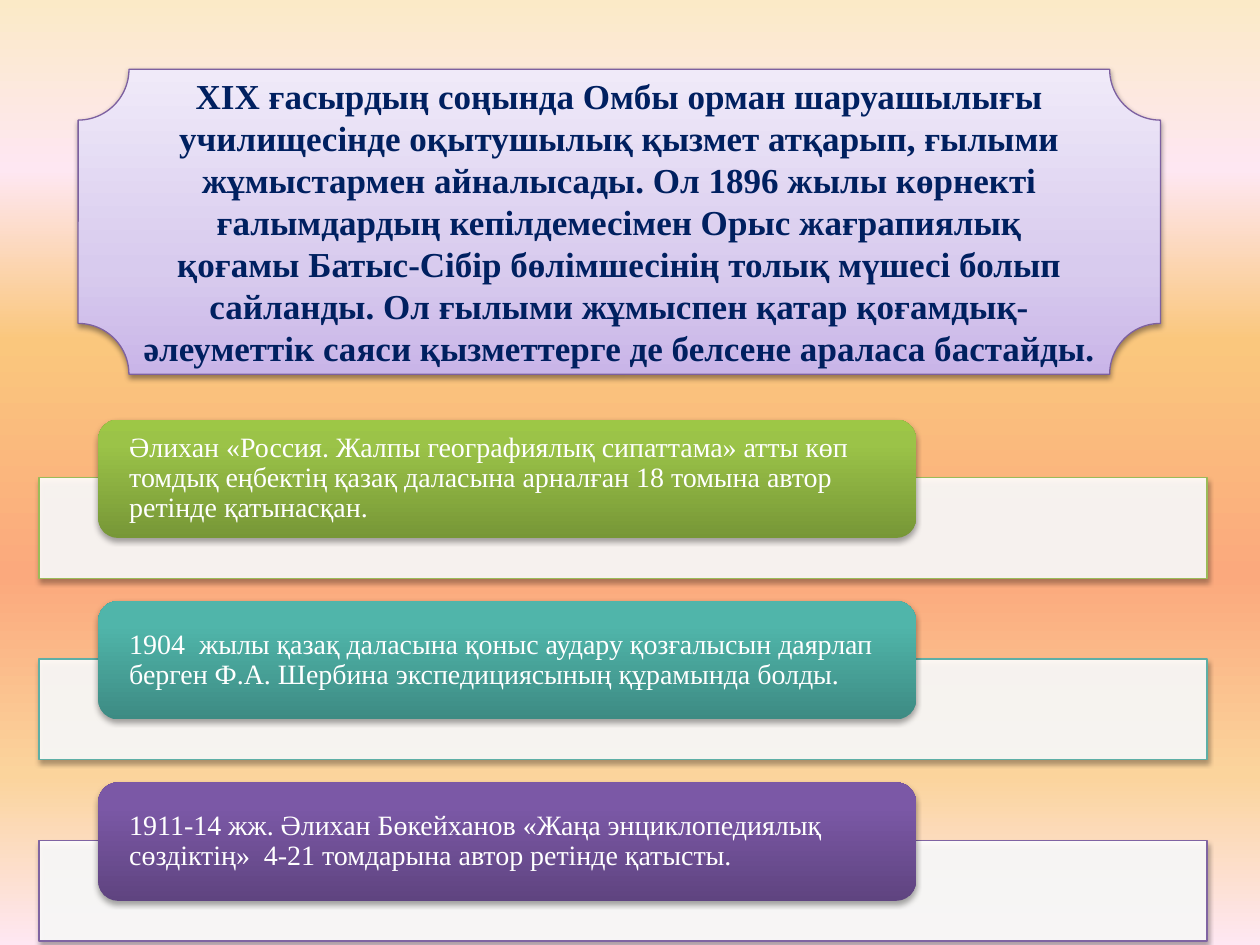
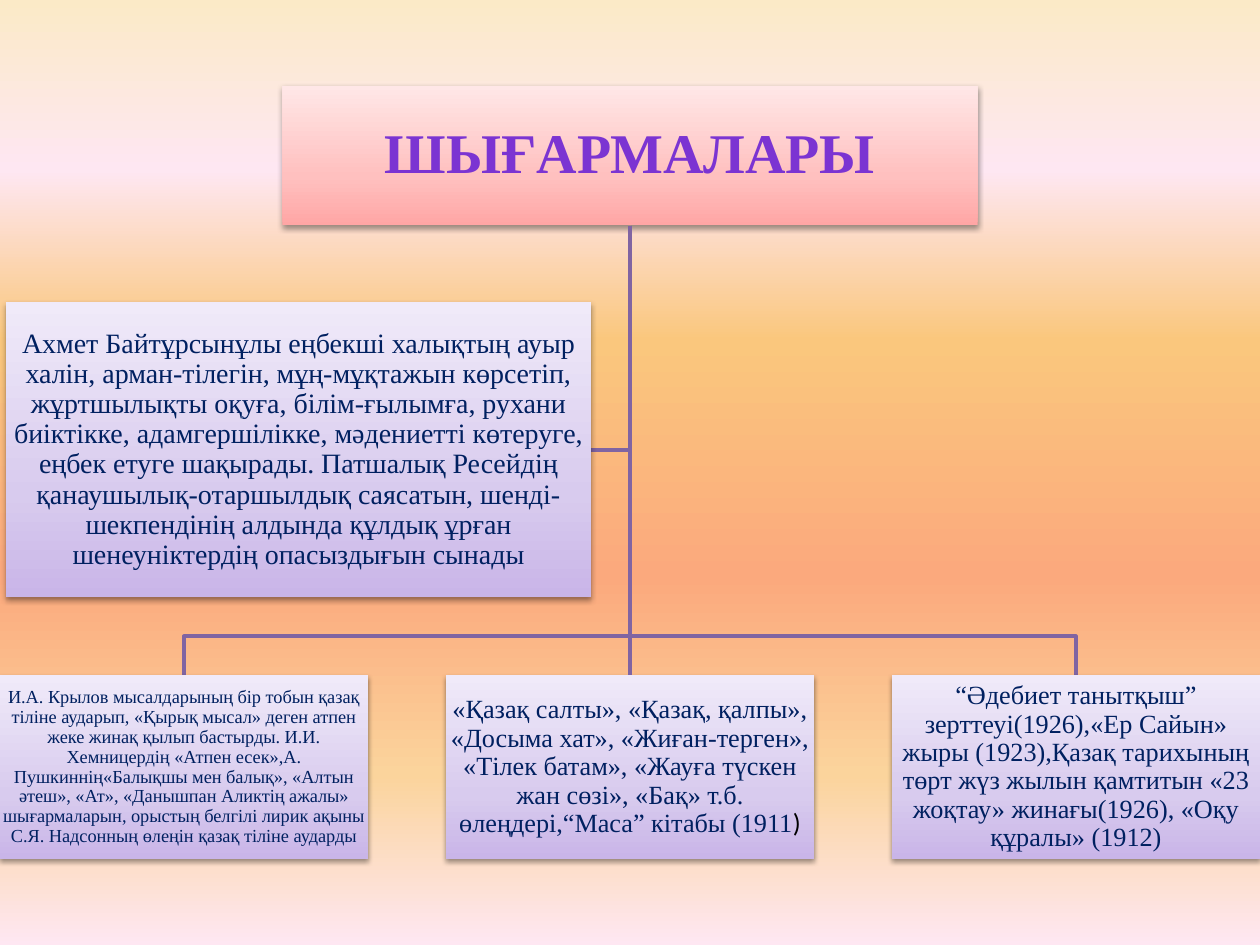
from dataclasses import dataclass

from lxml import etree
from pptx import Presentation
from pptx.dml.color import RGBColor
from pptx.enum.shapes import MSO_CONNECTOR, MSO_SHAPE
from pptx.enum.text import MSO_ANCHOR, MSO_AUTO_SIZE, PP_ALIGN
from pptx.oxml.ns import qn
from pptx.util import Inches, Pt

RECT = MSO_SHAPE.RECTANGLE
ROUNDED = MSO_SHAPE.ROUNDED_RECTANGLE
PLAQUE = MSO_SHAPE.PLAQUE
STRAIGHT = MSO_CONNECTOR.STRAIGHT
LEFT, CENTER = PP_ALIGN.LEFT, PP_ALIGN.CENTER
MIDDLE = MSO_ANCHOR.MIDDLE
NO_AUTOFIT = MSO_AUTO_SIZE.NONE
TOP_SIDE, BOTTOM_SIDE = 0, 2
TITLE_ONLY = 5
NBSP = chr(160)

FONT = "Times New Roman"
NAVY, WHITE, BLACK = "002060", "FFFFFF", "000000"
VIOLET, TITLE_VIOLET, PLAQUE_EDGE = "8064A2", "7B34D2", "7D60A0"
SUNSET = [(0, "FBEAC7"), (18, "FEE7F2"), (36, "FAC77D"),
          (61, "FBA97D"), (82, "FBD49C"), (100, "FEE7F2")]
LILAC = [(0, "C9B5E8"), (35, "D8CBEE"), (100, "F0EAF9")]
ROSE = [(0, "FFA6A5"), (35, "FFC0BF"), (100, "FFE7E7")]
DOWNWARD, UPWARD = 90, 270


@dataclass
class Box:
    left: float
    top: float
    width: float
    height: float

    def lengths(self) -> list:
        return [Inches(v) for v in (self.left, self.top, self.width, self.height)]

    @property
    def center_x(self) -> float:
        return self.left + self.width / 2


@dataclass
class Achievement:
    text: str
    edge: str
    shades: tuple


@dataclass
class Work:
    box: Box
    size: float
    text: str
    ending: str = ""


PLAQUE_BOX = Box(0.62, 0.55, 8.59, 2.42)
PLAQUE_TEXT = (
    "XIX ғасырдың соңында Омбы орман шаруашылығы училищесінде оқытушылық қызмет "
    f"атқарып, ғылыми жұмыстармен айналысады. Ол{NBSP}1896{NBSP}жылы көрнекті "
    f"ғалымдардың кепілдемесімен{NBSP}Орыс жағрапиялық қоғамы{NBSP}Батыс-Сібір "
    "бөлімшесінің толық мүшесі болып сайланды. Ол ғылыми жұмыспен қатар "
    "қоғамдық-әлеуметтік саяси қызметтерге де белсене араласа бастайды.")
ACHIEVEMENTS = [
    Achievement("Әлихан «Россия. Жалпы географиялық сипаттама» атты көп томдық "
                "еңбектің қазақ даласына арналған 18 томына автор ретінде қатынасқан.",
                "9BBB59", ("779737", "9BC348", "9DC746")),
    Achievement(f"1904 {NBSP}жылы қазақ даласына қоныс аудару қозғалысын даярлап берген "
                "Ф.А. Шербина экспедициясының құрамында болды.",
                "5EAFA6", ("3D8B83", "50B5AA", "4EB8AC")),
    Achievement(f"1911-14{NBSP}жж. Әлихан Бөкейханов «Жаңа энциклопедиялық сөздіктің»  "
                "4-21 томдарына автор ретінде қатысты.",
                VIOLET, ("5F4480", "7B58A6", "7C57A8")),
]
ROW_PITCH = 1.44

WORKS_TITLE_BOX = Box(2.24, 0.68, 5.52, 1.11)
WORK_TOP, WORK_PITCH, BRANCH_Y = 5.36, 3.54, 5.05
MESSAGE = Work(
    Box(0.05, 2.4, 4.64, 2.34), 16,
    "Ахмет Байтұрсынұлы еңбекші халықтың ауыр халін, арман-тілегін, мұң-мұқтажын "
    "көрсетіп, жұртшылықты оқуға, білім-ғылымға, рухани биіктікке, адамгершілікке, "
    "мәдениетті көтеруге, еңбек етуге шақырады. Патшалық Ресейдің "
    "қанаушылық-отаршылдық саясатын, шенді-шекпендінің алдында құлдық ұрған "
    "шенеуніктердің опасыздығын сынады")


def work_box(column: int) -> Box:
    return Box(column * WORK_PITCH, WORK_TOP, 2.92, 1.46)


WORKS = [
    Work(work_box(0), 10.5,
         "И.А. Крылов мысалдарының бір тобын қазақ тіліне аударып, «Қырық мысал» "
         "деген атпен жеке жинақ қылып бастырды. И.И. Хемницердің «Атпен есек»,А. "
         "Пушкиннің«Балықшы мен балық», «Алтын әтеш», «Ат», «Данышпан Аликтің "
         "ажалы» шығармаларын, орыстың белгілі лирик ақыны С.Я. Надсонның өлеңін "
         "қазақ тіліне аударды"),
    Work(work_box(1), 15,
         "«Қазақ салты», «Қазақ, қалпы», «Досыма хат», «Жиған-терген», «Тілек "
         "батам», «Жауға түскен жан сөзі», «Бақ» т.б. өлеңдері,“Маса” кітабы (1911",
         ")"),
    Work(work_box(2), 15,
         "“Әдебиет танытқыш” зерттеуі(1926),«Ер Сайын» жыры (1923),Қазақ тарихының "
         "төрт жүз жылын қамтитын «23 жоқтау» жинағы(1926), «Оқу құралы» (1912)"),
]


def rgb(color: str) -> RGBColor:
    return RGBColor.from_string(color)


def set_gradient(fill, owner, stops: list, angle: int) -> None:
    """Fill with any number of (percent, colour) stops; owner holds the fill's XML."""
    fill.gradient()
    gradient = next(owner.iter(qn("a:gradFill")))
    stop_list = gradient.find(qn("a:gsLst"))
    for old_stop in list(stop_list):
        stop_list.remove(old_stop)
    for percent, color in stops:
        stop = etree.SubElement(stop_list, qn("a:gs"), pos=str(percent * 1000))
        etree.SubElement(stop, qn("a:srgbClr"), val=color)
    gradient.find(qn("a:lin")).set("ang", str(angle * 60000))


def set_shadow(shape, opacity: int, distance: float) -> None:
    shape.shadow.inherit = False
    effects = shape.element.spPr.find(qn("a:effectLst"))
    outer = etree.SubElement(effects, qn("a:outerShdw"), blurRad=str(Pt(3.1)),
                             dist=str(Pt(distance)), dir="5400000", rotWithShape="0")
    color = etree.SubElement(outer, qn("a:srgbClr"), val=BLACK)
    etree.SubElement(color, qn("a:alpha"), val=str(opacity * 1000))


def set_edge(shape, color: str = "", width: float = 0.75) -> None:
    if color:
        shape.line.color.rgb = rgb(color)
        shape.line.width = Pt(width)
    else:
        shape.line.fill.background()


def style_panel(shape, stops: list, edge: str = "") -> None:
    set_gradient(shape.fill, shape.element.spPr, stops, UPWARD)
    set_edge(shape, edge)
    set_shadow(shape, 38, 1.6)


def write(shape, text: str, size: float, color: str, align=CENTER,
          bold: bool = False, spacing: float = 0.9, inset: tuple = (0.01, 0.01)):
    """Write one formatted paragraph and return it; inset is (sides, top and bottom)."""
    frame = shape.text_frame
    frame.text = text
    frame.word_wrap = True
    frame.auto_size = NO_AUTOFIT
    frame.vertical_anchor = MIDDLE
    frame.margin_left = frame.margin_right = Inches(inset[0])
    frame.margin_top = frame.margin_bottom = Inches(inset[1])
    paragraph = frame.paragraphs[0]
    paragraph.alignment = align
    paragraph.line_spacing = spacing
    font = paragraph.runs[0].font
    font.name, font.size, font.bold = FONT, Pt(size), bold
    font.color.rgb = rgb(color)
    return paragraph


def place_title(slide, box: Box):
    title = slide.shapes.title
    title.left, title.top, title.width, title.height = box.lengths()
    return title


def add_achievement(slide, row: int, item: Achievement) -> None:
    offset = row * ROW_PITCH
    bar = slide.shapes.add_shape(RECT, *Box(0.31, 3.79 + offset, 9.27, 0.8).lengths())
    bar.fill.solid()
    bar.fill.fore_color.rgb = rgb(WHITE)
    white = next(bar.element.spPr.iter(qn("a:srgbClr")))
    etree.SubElement(white, qn("a:alpha"), val="90000")
    set_edge(bar, item.edge)
    set_shadow(bar, 35, 1.8)

    card = slide.shapes.add_shape(ROUNDED, *Box(0.78, 3.33 + offset, 6.49, 0.94).lengths())
    stops = list(zip((0, 80, 100), item.shades))
    set_gradient(card.fill, card.element.spPr, stops, UPWARD)
    set_edge(card)
    set_shadow(card, 35, 1.8)
    write(card, item.text, 16, WHITE, LEFT, inset=(0.2, 0))


def add_work(slide, work: Work):
    panel = slide.shapes.add_shape(RECT, *work.box.lengths())
    style_panel(panel, LILAC)
    paragraph = write(panel, work.text, work.size, NAVY)
    if work.ending:
        ending = paragraph.add_run()
        ending.text = work.ending
        ending.font.name, ending.font.size = "Calibri", Pt(work.size)
        ending.font.color.rgb = rgb(BLACK)
    return panel


def add_trunk(slide, title, panel) -> None:
    trunk = slide.shapes.add_connector(STRAIGHT, 0, 0, 0, 0)
    trunk.begin_connect(title, BOTTOM_SIDE)
    trunk.end_connect(panel, TOP_SIDE)
    set_edge(trunk, VIOLET, 2)
    etree.SubElement(trunk.element.spPr, qn("a:effectLst"))


def add_branch(slide, points: list) -> None:
    start, *corners = [(Inches(x), Inches(y)) for x, y in points]
    builder = slide.shapes.build_freeform(*start)
    builder.add_line_segments(corners, close=False)
    branch = builder.convert_to_shape()
    branch.fill.background()
    set_edge(branch, VIOLET, 2)
    branch.shadow.inherit = False


def build_career_slide(slide) -> None:
    for row, item in enumerate(ACHIEVEMENTS):
        add_achievement(slide, row, item)
    plaque = slide.shapes.add_shape(PLAQUE, *PLAQUE_BOX.lengths())
    style_panel(plaque, LILAC, PLAQUE_EDGE)
    title = place_title(slide, PLAQUE_BOX)
    title.element.addprevious(plaque.element)
    write(title, PLAQUE_TEXT, 20, NAVY, bold=True, spacing=1.0, inset=(0.38, 0.05))


def build_works_slide(slide) -> None:
    title = place_title(slide, WORKS_TITLE_BOX)
    style_panel(title, ROSE)
    write(title, "ШЫҒАРМАЛАРЫ", 32, TITLE_VIOLET, bold=True, inset=(0.02, 0.02))

    trunk_x = WORKS_TITLE_BOX.center_x
    root = (trunk_x, WORKS_TITLE_BOX.top + WORKS_TITLE_BOX.height)
    message_y = MESSAGE.box.top + MESSAGE.box.height / 2
    message_right = MESSAGE.box.left + MESSAGE.box.width
    add_branch(slide, [root, (trunk_x, message_y), (message_right, message_y)])
    for outer in (WORKS[-1].box, WORKS[0].box):
        add_branch(slide, [root, (trunk_x, BRANCH_Y), (outer.center_x, BRANCH_Y),
                           (outer.center_x, outer.top)])

    panels = [add_work(slide, work) for work in WORKS]
    add_work(slide, MESSAGE)
    add_trunk(slide, title, panels[1])


def main() -> None:
    prs = Presentation()
    prs.slide_width, prs.slide_height = Inches(10), Inches(7.5)
    master = prs.slide_master
    set_gradient(master.background.fill, master.element, SUNSET, DOWNWARD)
    for build in (build_career_slide, build_works_slide):
        build(prs.slides.add_slide(prs.slide_layouts[TITLE_ONLY]))
    prs.save("out.pptx")


if __name__ == "__main__":
    main()
